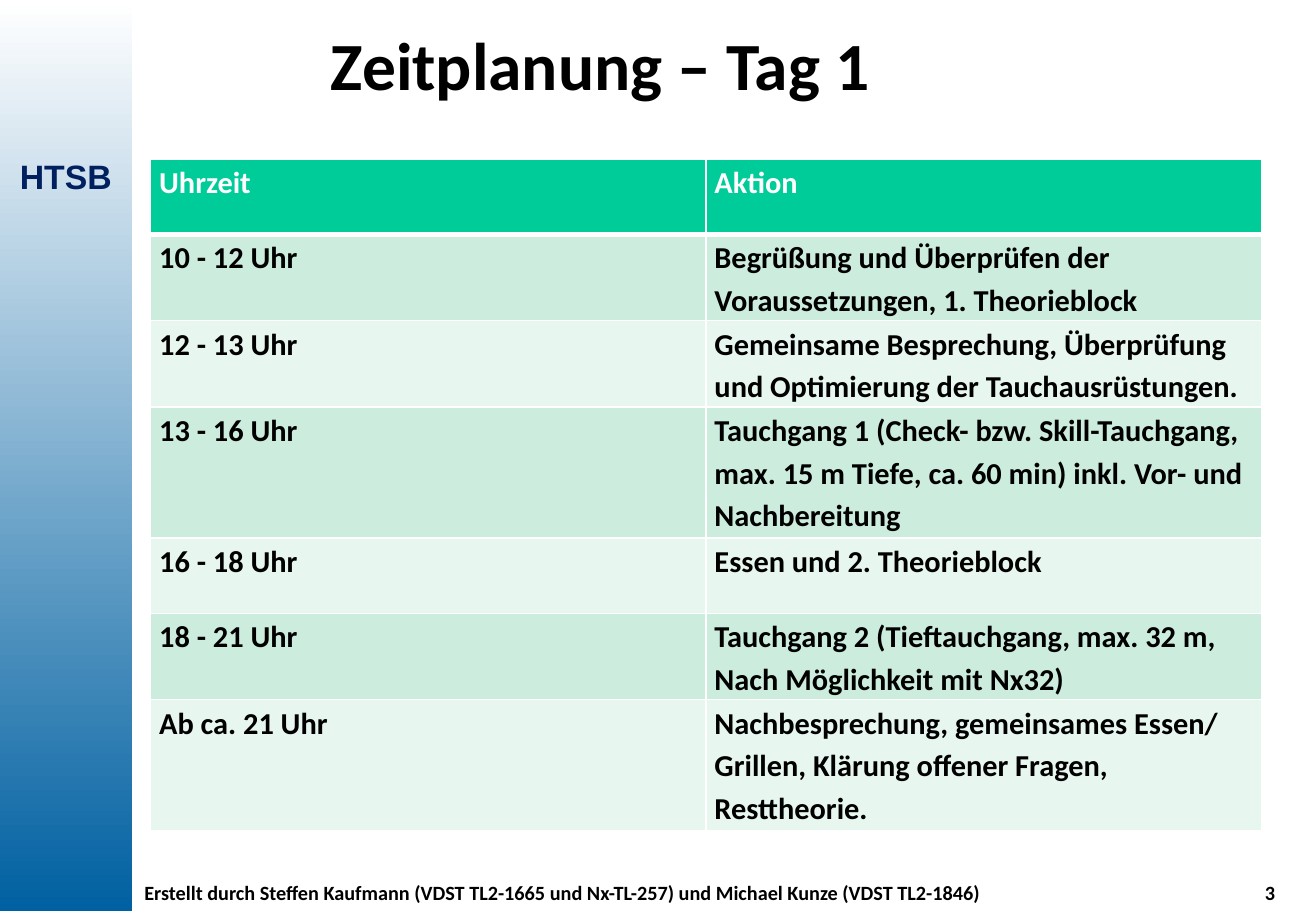
"""Builds the timetable slide for day 1 of a diving course."""
from typing import NamedTuple

import lxml.etree
import pptx
import pptx.dml.color
import pptx.enum.shapes
import pptx.enum.text
import pptx.oxml.ns
import pptx.util

RGBColor = pptx.dml.color.RGBColor
Align = pptx.enum.text.PP_ALIGN

WHITE = RGBColor(0xFF, 0xFF, 0xFF)
BLACK = RGBColor(0x00, 0x00, 0x00)
NAVY = RGBColor(0x00, 0x20, 0x60)
OCEAN = RGBColor(0x00, 0x60, 0xA1)
GREEN = RGBColor(0x00, 0xCC, 0x99)
MINT = RGBColor(0xCC, 0xEC, 0xDE)
PALE_MINT = RGBColor(0xE7, 0xF6, 0xEF)

SLIDE_WIDTH = pptx.util.Inches(10.83)
SLIDE_HEIGHT = pptx.util.Inches(7.5)


class Frame(NamedTuple):
    """Position and size in percent of the slide's width and height."""
    left: float
    top: float
    width: float
    height: float


class Style(NamedTuple):
    """Look of a bold run and the alignment of its paragraph."""
    size: int
    color: RGBColor = BLACK
    font: str = "Calibri"
    align: Align = Align.LEFT


class Label(NamedTuple):
    """A text box on the slide's margin."""
    text: str
    frame: Frame
    style: Style
    wrap: bool = True


class Entry(NamedTuple):
    """A row of the timetable, with its height in percent of the slide."""
    time: str
    action: str
    height: float


ONE_LINE, TWO_LINES, THREE_LINES = 8.27, 9.47, 14.4

SIDEBAR = Frame(0, 0, 10, 100)
TITLE = Label("Zeitplanung – Tag 1", Frame(11.45, 1.87, 68.33, 13.47),
              Style(40, align=Align.CENTER))
LABELS = [
    Label("HTSB", Frame(0, 16.4, 10, 5.87), Style(20, NAVY, "Arial", Align.CENTER)),
    Label("Erstellt durch Steffen Kaufmann (VDST TL2-1665 und Nx-TL-257) "
          "und Michael Kunze (VDST TL2-1846)", Frame(10.06, 96, 68.33, 4), Style(12)),
    Label("3", Frame(95.2, 96, 4.8, 4), Style(12), wrap=False),
]
TIMETABLE = [
    Entry("Uhrzeit", "Aktion", ONE_LINE),
    Entry("10 - 12 Uhr", "Begrüßung und Überprüfen der Voraussetzungen, 1. Theorieblock",
          TWO_LINES),
    Entry("12 - 13 Uhr", "Gemeinsame Besprechung, Überprüfung und Optimierung der "
          "Tauchausrüstungen.", TWO_LINES),
    Entry("13 - 16 Uhr", "Tauchgang 1 (Check- bzw. Skill-Tauchgang, max. 15 m Tiefe, "
          "ca. 60 min) inkl. Vor- und Nachbereitung", THREE_LINES),
    Entry("16 - 18 Uhr", "Essen und 2. Theorieblock", ONE_LINE),
    Entry("18 - 21 Uhr", "Tauchgang 2 (Tieftauchgang, max. 32 m, Nach Möglichkeit mit Nx32)",
          TWO_LINES),
    Entry("Ab ca. 21 Uhr", "Nachbesprechung, gemeinsames Essen/ Grillen, Klärung offener "
          "Fragen, Resttheorie.", THREE_LINES),
]
TABLE = Frame(11.45, 17.47, 84.4, sum(entry.height for entry in TIMETABLE))


def across(percent: float) -> int:
    """Return a share of the slide's width."""
    return round(SLIDE_WIDTH * percent / 100)


def down(percent: float) -> int:
    """Return a share of the slide's height."""
    return round(SLIDE_HEIGHT * percent / 100)


def place(frame: Frame) -> tuple[int, int, int, int]:
    """Return left, top, width and height as lengths."""
    return across(frame.left), down(frame.top), across(frame.width), down(frame.height)


def write(text_frame, text: str, style: Style):
    """Write one bold run and return its paragraph."""
    paragraph = text_frame.paragraphs[0]
    paragraph.alignment = style.align
    run = paragraph.add_run()
    run.text = text
    run.font.name = style.font
    run.font.size = pptx.util.Pt(style.size)
    run.font.bold = True
    run.font.color.rgb = style.color
    return paragraph


def draw_sidebar(slide) -> None:
    """Draw the strip that fades from white to blue."""
    shape = slide.shapes.add_shape(
        pptx.enum.shapes.MSO_SHAPE.RECTANGLE, *place(SIDEBAR))
    shape.shadow.inherit = False
    shape.line.fill.background()
    shape.fill.gradient()
    shape.fill.gradient_angle = 270
    for stop, color in zip(shape.fill.gradient_stops, (WHITE, OCEAN)):
        stop.color.rgb = color


def draw_title(slide) -> None:
    """Fill the title placeholder."""
    shape = slide.shapes.title
    shape.left, shape.top, shape.width, shape.height = place(TITLE.frame)
    shape.text_frame.vertical_anchor = pptx.enum.text.MSO_ANCHOR.TOP
    write(shape.text_frame, TITLE.text, TITLE.style)


def draw_label(slide, label: Label) -> None:
    """Draw a text box."""
    shape = slide.shapes.add_textbox(*place(label.frame))
    shape.text_frame.word_wrap = label.wrap
    write(shape.text_frame, label.text, label.style)


def add_borders(cell, bottom: float, top: float) -> None:
    """Give a cell white borders."""
    properties = cell._tc.get_or_add_tcPr()
    for side, width in (("L", 1), ("R", 1), ("T", top), ("B", bottom)):
        line = lxml.etree.SubElement(
            properties, pptx.oxml.ns.qn(f"a:ln{side}"), w=str(pptx.util.Pt(width)))
        fill = lxml.etree.SubElement(line, pptx.oxml.ns.qn("a:solidFill"))
        lxml.etree.SubElement(fill, pptx.oxml.ns.qn("a:srgbClr"), val=str(WHITE))


def draw_timetable(slide) -> None:
    """Draw the timetable with a header and banded rows."""
    table = slide.shapes.add_table(len(TIMETABLE), 2, *place(TABLE)).table
    for index, entry in enumerate(TIMETABLE):
        is_header = index == 0
        band = MINT if index % 2 else PALE_MINT
        table.rows[index].height = down(entry.height)
        for cell, text in zip(table.rows[index].cells, (entry.time, entry.action)):
            cell.margin_left = cell.margin_right = pptx.util.Inches(0.07)
            cell.margin_top = cell.margin_bottom = 0
            add_borders(cell, bottom=3 if is_header else 1, top=3 if index == 1 else 1)
            cell.fill.solid()
            cell.fill.fore_color.rgb = GREEN if is_header else band
            paragraph = write(cell.text_frame, text, Style(18, WHITE if is_header else BLACK))
            paragraph.line_spacing = 1.15
            paragraph.space_after = pptx.util.Pt(6)


def main() -> None:
    """Build and save the presentation."""
    presentation = pptx.Presentation()
    presentation.slide_width = SLIDE_WIDTH
    presentation.slide_height = SLIDE_HEIGHT
    slide = presentation.slides.add_slide(presentation.slide_layouts[5])
    draw_sidebar(slide)
    for label in LABELS:
        draw_label(slide, label)
    draw_title(slide)
    draw_timetable(slide)
    presentation.save("out.pptx")


if __name__ == "__main__":
    main()
